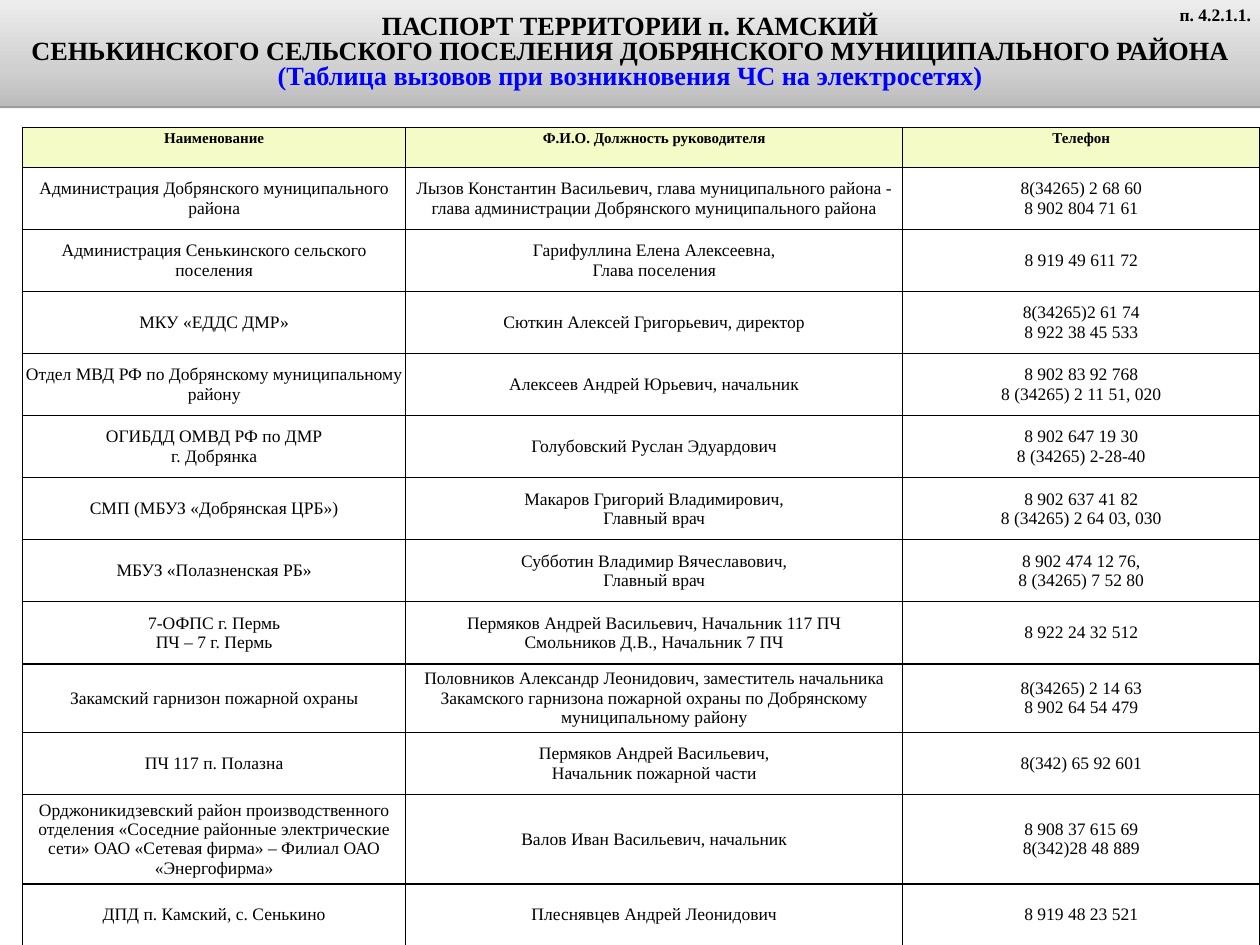
from pptx import Presentation
from pptx.dml.color import RGBColor
from pptx.enum.text import MSO_ANCHOR, MSO_AUTO_SIZE, PP_ALIGN
from pptx.oxml import parse_xml
from pptx.oxml.ns import nsdecls
from pptx.util import Inches, Pt

CENTER, RIGHT = PP_ALIGN.CENTER, PP_ALIGN.RIGHT
TOP, MIDDLE = MSO_ANCHOR.TOP, MSO_ANCHOR.MIDDLE
NO_FIT = MSO_AUTO_SIZE.NONE
BLACK = RGBColor(0x00, 0x00, 0x00)
BLUE = RGBColor(0x00, 0x00, 0xFF)
WHITE = RGBColor(0xFF, 0xFF, 0xFF)
CREAM = RGBColor(0xF4, 0xFB, 0xC7)
BAND_STOPS = [
    (0, RGBColor(0xBC, 0xBC, 0xBC)),
    (35, RGBColor(0xD0, 0xD0, 0xD0)),
    (100, RGBColor(0xED, 0xED, 0xED)),
]
FONT = "Times New Roman"
WIDTH, HEIGHT = 14, 10.5

TITLE = [
    "ПАСПОРТ ТЕРРИТОРИИ п. КАМСКИЙ",
    "СЕНЬКИНСКОГО СЕЛЬСКОГО ПОСЕЛЕНИЯ ДОБРЯНСКОГО МУНИЦИПАЛЬНОГО РАЙОНА",
    "(Таблица вызовов при возникновения ЧС на электросетях)",
]
COLUMNS = [4.26, 5.52, 3.97]
HEAD_ROW, ROW = 0.44, 0.69
TALL_ROWS = {9: 0.75, 11: 0.99}
CONTACTS = [
    ("Наименование", "Ф.И.О. Должность руководителя", "Телефон"),
    ("Администрация Добрянского муниципального района",
     "Лызов Константин Васильевич, глава муниципального района - "
     "глава администрации Добрянского муниципального района",
     "8(34265) 2 68 60\n8 902 804 71 61"),
    ("Администрация Сенькинского сельского поселения",
     "Гарифуллина Елена Алексеевна,\nГлава поселения",
     "8 919 49 611 72"),
    ("МКУ «ЕДДС ДМР»", "Сюткин Алексей Григорьевич, директор",
     "8(34265)2 61 74\n8 922 38 45 533"),
    ("Отдел МВД РФ по Добрянскому муниципальному району",
     "Алексеев Андрей Юрьевич, начальник",
     "8 902 83 92 768\n8 (34265) 2 11 51, 020"),
    ("ОГИБДД ОМВД РФ по ДМР\nг. Добрянка", "Голубовский Руслан Эдуардович",
     "8 902 647 19 30\n8 (34265) 2-28-40"),
    ("СМП (МБУЗ «Добрянская ЦРБ»)",
     "Макаров Григорий Владимирович,\nГлавный врач",
     "8 902 637 41 82\n8 (34265) 2 64 03, 030"),
    ("МБУЗ «Полазненская РБ»",
     "Субботин Владимир Вячеславович,\nГлавный врач",
     "8 902 474 12 76,\n8 (34265) 7 52 80"),
    ("7-ОФПС г. Пермь\nПЧ – 7 г. Пермь",
     "Пермяков Андрей Васильевич, Начальник 117 ПЧ\n"
     "Смольников Д.В., Начальник 7 ПЧ",
     "8 922 24 32 512"),
    ("Закамский гарнизон пожарной охраны",
     "Половников Александр Леонидович, заместитель начальника "
     "Закамского гарнизона пожарной охраны по Добрянскому "
     "муниципальному району",
     "8(34265) 2 14 63\n8 902 64 54 479"),
    ("ПЧ 117 п. Полазна",
     "Пермяков Андрей Васильевич,\nНачальник пожарной части",
     "8(342) 65 92 601"),
    ("Орджоникидзевский район производственного отделения "
     "«Соседние районные электрические сети» ОАО «Сетевая фирма» – "
     "Филиал ОАО «Энергофирма»",
     "Валов Иван Васильевич, начальник",
     "8 908 37 615 69\n8(342)28 48 889"),
    ("ДПД п. Камский, с. Сенькино", "Плеснявцев Андрей Леонидович",
     "8 919 48 23 521"),
]


def format_text(tf, size, bold, align=CENTER, spacing=None):
    for p in tf.paragraphs:
        p.alignment = align
        p.line_spacing = spacing
        for r in p.runs:
            r.font.name = FONT
            r.font.size = Pt(size)
            r.font.bold = bold
            r.font.color.rgb = BLACK


def paint_band(sp):
    stops = "".join(
        f'<a:gs pos="{pos * 1000}"><a:srgbClr val="{color}"/></a:gs>'
        for pos, color in BAND_STOPS)
    spPr = sp.element.spPr
    spPr.append(parse_xml(
        f'<a:gradFill {nsdecls("a")}><a:gsLst>{stops}</a:gsLst>'
        '<a:lin ang="16200000" scaled="1"/></a:gradFill>'))
    spPr.append(parse_xml(
        f'<a:effectLst {nsdecls("a")}>'
        '<a:outerShdw blurRad="0" dist="20000" dir="5400000" rotWithShape="0">'
        f'<a:srgbClr val="{BLACK}"><a:alpha val="38000"/></a:srgbClr>'
        '</a:outerShdw></a:effectLst>'))


def add_title(s, left, top, width, height):
    sp = s.shapes.title
    sp.left, sp.top = Inches(left), Inches(top)
    sp.width, sp.height = Inches(width), Inches(height)
    paint_band(sp)
    tf = sp.text_frame
    tf.text = "\n".join(TITLE)
    tf.auto_size = NO_FIT
    tf.word_wrap = True
    tf.vertical_anchor = MIDDLE
    format_text(tf, 21, True, spacing=0.8)
    tf.paragraphs[-1].runs[0].font.color.rgb = BLUE


def add_reference(s, left, top, width, height):
    sp = s.shapes.add_textbox(Inches(left), Inches(top), Inches(width), Inches(height))
    tf = sp.text_frame
    tf.text = "п. 4.2.1.1."
    format_text(tf, 14, True, RIGHT)


def draw_borders(cell):
    tcPr = cell._tc.get_or_add_tcPr()
    for side in "LRTB":
        tcPr.append(parse_xml(
            f'<a:ln{side} {nsdecls("a")} w="{Pt(1)}"><a:solidFill>'
            f'<a:srgbClr val="{BLACK}"/></a:solidFill></a:ln{side}>'))


def fill_cell(cell, text, is_head):
    cell.text_frame.text = text
    cell.margin_left = cell.margin_right = Inches(0.03)
    cell.margin_top = cell.margin_bottom = Inches(0.03)
    cell.vertical_anchor = TOP if is_head else MIDDLE
    draw_borders(cell)
    cell.fill.solid()
    cell.fill.fore_color.rgb = CREAM if is_head else WHITE
    format_text(cell.text_frame, 12 if is_head else 14, is_head)


def add_contacts(s, left, top):
    heights = [HEAD_ROW] + [TALL_ROWS.get(i, ROW) for i in range(1, len(CONTACTS))]
    table = s.shapes.add_table(
        len(CONTACTS), len(COLUMNS), Inches(left), Inches(top),
        Inches(sum(COLUMNS)), Inches(sum(heights))).table
    table.first_row = table.horz_banding = False
    for column, width in zip(table.columns, COLUMNS):
        column.width = Inches(width)
    for i, (row, height, texts) in enumerate(zip(table.rows, heights, CONTACTS)):
        row.height = Inches(height)
        for cell, text in zip(row.cells, texts):
            fill_cell(cell, text, i == 0)


def main():
    prs = Presentation()
    prs.slide_width, prs.slide_height = Inches(WIDTH), Inches(HEIGHT)
    s = prs.slides.add_slide(prs.slide_layouts[5])
    add_title(s, 0, 0, WIDTH, 1.18)
    add_reference(s, WIDTH - 1.06, 0, 1.06, 0.34)
    add_contacts(s, WIDTH - sum(COLUMNS), 1.42)
    prs.save("out.pptx")


if __name__ == "__main__":
    main()
